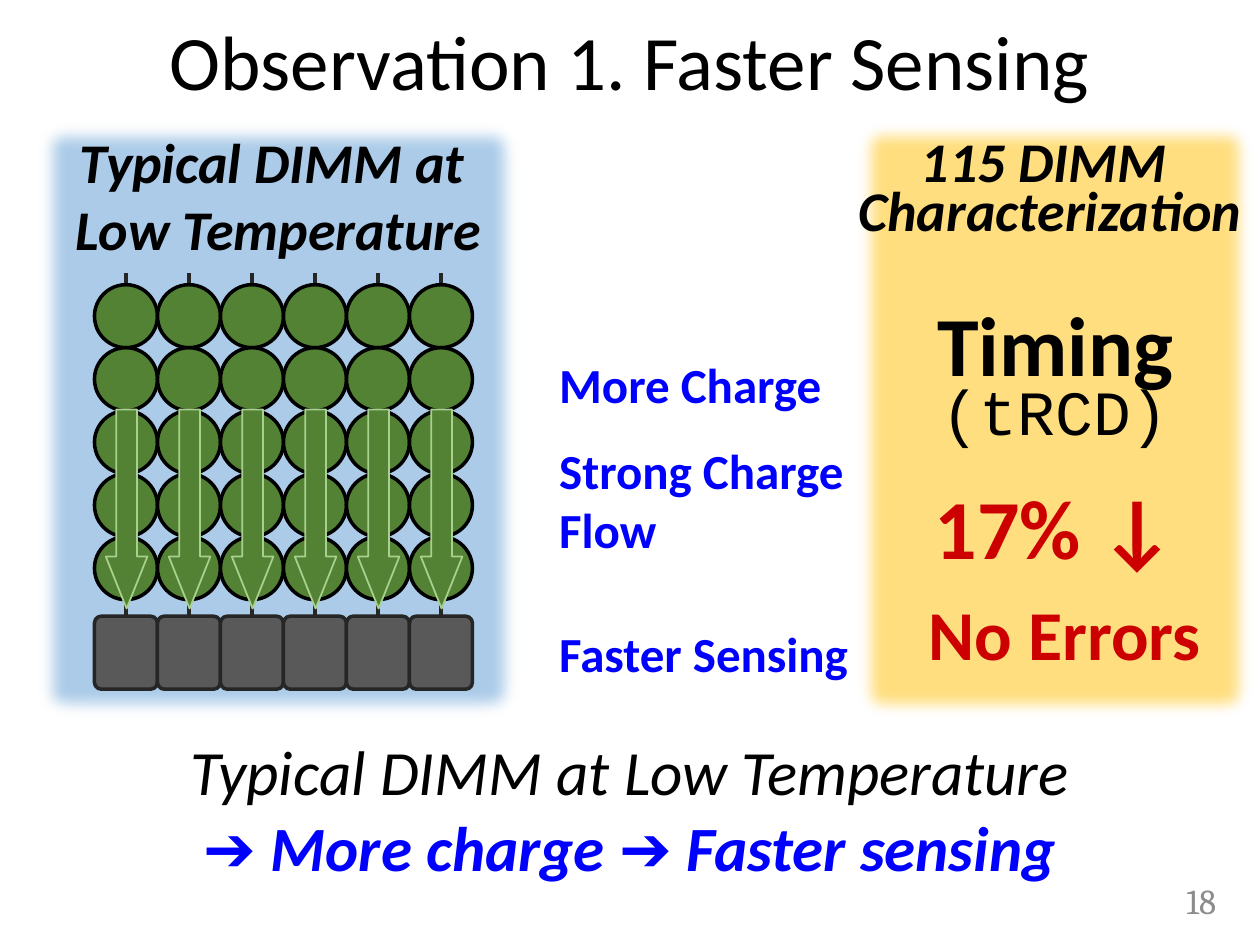
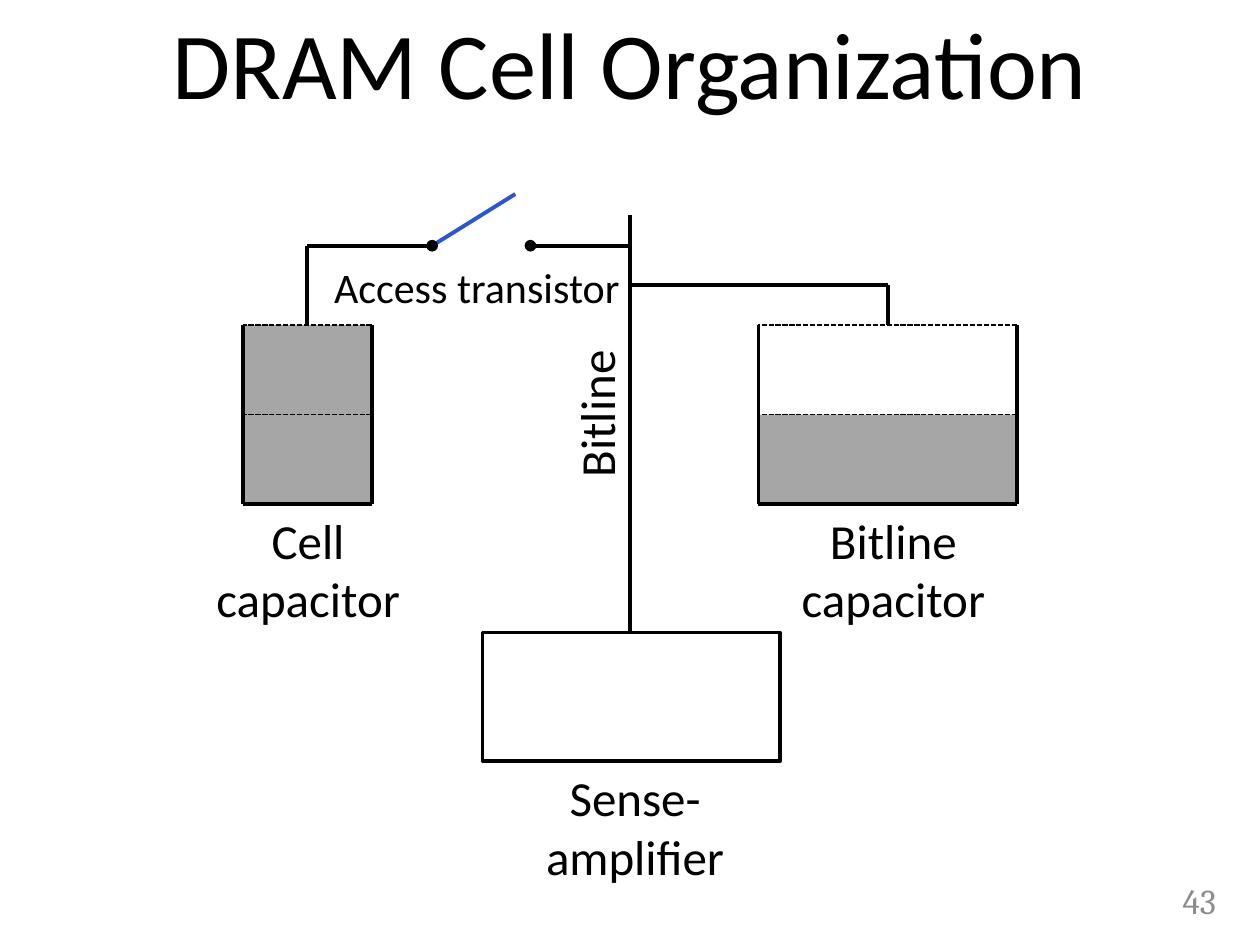
from dataclasses import dataclass

import pptx
import pptx.dml.color
import pptx.enum.dml
import pptx.enum.shapes
import pptx.enum.text
import pptx.oxml
import pptx.oxml.ns
import pptx.util

Inches = pptx.util.Inches
Pt = pptx.util.Pt
SHAPE = pptx.enum.shapes.MSO_SHAPE
ALIGN = pptx.enum.text.PP_ALIGN
ANCHOR = pptx.enum.text.MSO_ANCHOR
DASH = pptx.enum.dml.MSO_LINE
TITLE_ONLY = 5


@dataclass(frozen=True)
class Theme:
    body_font: str = "Calibri"
    number_font: str = "Cambria"
    code_font: str = "Courier New"
    black: str = "000000"
    white: str = "FFFFFF"
    page_gray: str = "8C8C8C"
    blue_panel: str = "5B9BD5"
    yellow_panel: str = "FFC000"
    emphasis_blue: str = "0000FF"
    result_red: str = "CC0000"
    cell_green: str = "548235"
    flow_green: str = "A9D18E"
    amplifier_fill: str = "595959"
    amplifier_line: str = "262626"
    charge_gray: str = "A6A6A6"
    switch_blue: str = "2A55D6"
    result_size: int = 48
    error_size: int = 40
    summary_size: int = 36
    heading_size: int = 32
    label_size: int = 28
    small_label_size: int = 24
    number_size: int = 20
    wire: float = 2.25


THEME = Theme()


@dataclass(frozen=True)
class Box:
    left: float
    top: float
    width: float
    height: float

    @property
    def right(self):
        return self.left + self.width

    @property
    def bottom(self):
        return self.top + self.height

    @property
    def center(self):
        return self.left + self.width / 2

    @property
    def lengths(self):
        return [Inches(v) for v in (self.left, self.top, self.width, self.height)]


def apply(target, values):
    for name, value in values.items():
        setattr(target, name, value)


def rgb(color):
    return pptx.dml.color.RGBColor.from_string(color)


def add_xml(parent, tag, **attributes):
    element = pptx.oxml.parse_xml(f"<a:{tag} {pptx.oxml.ns.nsdecls('a')}/>")
    for name, value in attributes.items():
        element.set(name, str(value))
    parent.append(element)
    return element


def run(text, color=THEME.black, **font):
    return text, color, {"name": THEME.body_font, **font}


def line_of(*runs, alignment=ALIGN.CENTER, **spacing):
    return runs, {"alignment": alignment, **spacing}


def write(text_frame, lines, **frame_format):
    apply(text_frame, {"word_wrap": True,
                       "auto_size": pptx.enum.text.MSO_AUTO_SIZE.NONE,
                       "vertical_anchor": ANCHOR.MIDDLE, **frame_format})
    for index, (runs, paragraph_format) in enumerate(lines):
        paragraph = text_frame.add_paragraph() if index else text_frame.paragraphs[0]
        apply(paragraph, paragraph_format)
        for text, color, font in runs:
            text_run = paragraph.add_run()
            text_run.text = text
            apply(text_run.font, font)
            text_run.font.color.rgb = rgb(color)


def add_text(slide, box, lines, rotation=0, **frame_format):
    shape = slide.shapes.add_textbox(*box.lengths)
    shape.rotation = rotation
    write(shape.text_frame, lines, **frame_format)


def add_shape(slide, kind, box, fill=None, line=None, weight=2, adjustments=()):
    shape = slide.shapes.add_shape(kind, *box.lengths)
    shape.shadow.inherit = False
    for index, value in enumerate(adjustments):
        shape.adjustments[index] = value
    if fill:
        shape.fill.solid()
        shape.fill.fore_color.rgb = rgb(fill)
    else:
        shape.fill.background()
    if line:
        shape.line.color.rgb = rgb(line)
        shape.line.width = Pt(weight)
    else:
        shape.line.fill.background()
    return shape


def add_line(slide, start, end, color=THEME.black, weight=THEME.wire, dash=None, dot=None):
    """Draw a straight line; dot is "headEnd" or "tailEnd" for a round end."""
    connector = slide.shapes.add_connector(
        pptx.enum.shapes.MSO_CONNECTOR.STRAIGHT, *map(Inches, (*start, *end)))
    connector.line.color.rgb = rgb(color)
    connector.line.width = Pt(weight)
    if dash:
        connector.line.dash_style = dash
    properties = connector._element.spPr
    if dot:
        add_xml(properties.find(pptx.oxml.ns.qn("a:ln")), dot, type="oval")
    add_xml(properties, "effectLst")


def add_slide(presentation, title, title_box, size, number):
    slide = presentation.slides.add_slide(presentation.slide_layouts[TITLE_ONLY])
    slide.background.fill.solid()
    slide.background.fill.fore_color.rgb = rgb(THEME.white)
    placeholder = slide.shapes.title
    apply(placeholder, dict(zip(("left", "top", "width", "height"), title_box.lengths)))
    write(placeholder.text_frame, [line_of(run(title, size=Pt(size)), line_spacing=0.9)],
          vertical_anchor=ANCHOR.BOTTOM)
    add_text(slide, Box(9, 6.95, 0.75, 0.4),
             [line_of(run(str(number), THEME.page_gray, name=THEME.number_font,
                          size=Pt(THEME.number_size)), alignment=ALIGN.RIGHT)])
    return slide


def add_soft_panel(slide, box, color):
    """Half-transparent rectangle with blurred edges."""
    panel = add_shape(slide, SHAPE.RECTANGLE, box, color, THEME.blue_panel, 1)
    properties = panel._element.spPr
    color_element = properties.find(pptx.oxml.ns.qn("a:solidFill"))[0]
    add_xml(color_element, "alpha", val=50000)
    effects = properties.find(pptx.oxml.ns.qn("a:effectLst"))
    add_xml(effects, "softEdge", rad=Pt(10))
    return panel


def heading_run(text):
    return run(text, size=Pt(THEME.heading_size), bold=True, italic=True)


def add_dimm_panel(slide, box):
    add_soft_panel(slide, box, THEME.blue_panel)
    add_text(slide, Box(box.left - 0.08, box.top, box.width + 0.16, 1.25),
             [line_of(heading_run("Typical DIMM at ")),
              line_of(heading_run("Low Temperature"))])
    add_cell_array(slide, Box(box.left + 0.5, box.top + 1.25, 3, 3.3))


def add_cell_array(slide, box, columns=6, rows=5):
    pitch = box.width / columns
    amplifier_height = 0.58
    amplifier_top = box.bottom - amplifier_height
    lefts = [box.left + pitch * column for column in range(columns)]
    for left in lefts:
        center = left + pitch / 2
        add_line(slide, (center, amplifier_top), (center, box.top), THEME.amplifier_line, 2)
        add_shape(slide, SHAPE.ROUNDED_RECTANGLE,
                  Box(left, amplifier_top, pitch, amplifier_height),
                  THEME.amplifier_fill, THEME.amplifier_line, adjustments=[0.11])
    for row in range(rows):
        for left in lefts:
            add_shape(slide, SHAPE.OVAL,
                      Box(left, box.top + 0.09 + pitch * row, pitch, pitch),
                      THEME.cell_green, THEME.black)
    for left in lefts:
        add_shape(slide, SHAPE.DOWN_ARROW, Box(left + 0.09, box.top + 1.08, 0.33, 1.58),
                  THEME.cell_green, THEME.flow_green, 1, [0.5, 1.25])


def add_effect_labels(slide, box):
    labels = [(0, 0.58, ["More Charge"]),
              (0.74, 0.92, ["Strong Charge", "Flow"]),
              (2.13, 0.58, ["Faster Sensing"])]
    for offset, height, texts in labels:
        add_text(slide, Box(box.left, box.top + offset, box.width, height),
                 [line_of(run(text, THEME.emphasis_blue, size=Pt(THEME.label_size),
                              bold=True), alignment=ALIGN.LEFT) for text in texts])


def add_characterization_panel(slide, box):
    panel = add_soft_panel(slide, box, THEME.yellow_panel)
    result = {"size": Pt(THEME.result_size), "bold": True}
    write(panel.text_frame, [
        line_of(run("Timing", **result)),
        line_of(run("(tRCD)", name=THEME.code_font, size=Pt(THEME.summary_size)),
                line_spacing=0.7),
        line_of(run("17% ↓", THEME.result_red, **result), space_before=Pt(17)),
        line_of(run(" ", THEME.result_red, **result),
                run("No Errors", THEME.result_red, size=Pt(THEME.error_size), bold=True)),
    ], vertical_anchor=ANCHOR.TOP, margin_top=Inches(1.4))
    add_text(slide, Box(box.left - 0.08, box.top, box.width + 0.08, 1.08),
             [line_of(heading_run("115 DIMM ")),
              line_of(heading_run("Characterization"), line_spacing=0.7)])


def add_summary(slide, box):
    style = {"size": Pt(THEME.summary_size), "italic": True}
    add_text(slide, box, [
        line_of(run("Typical DIMM at Low Temperature", **style)),
        line_of(run("➔ More charge ➔ Faster sensing", THEME.emphasis_blue,
                    bold=True, **style))])


def add_diagram_label(slide, box, text, size=THEME.label_size, rotation=0):
    add_text(slide, box, [line_of(run(text, size=Pt(size)))], rotation,
             vertical_anchor=ANCHOR.TOP)


def add_capacitor(slide, box, charge, label, label_left, label_width):
    """Open container filled to the given share of its height."""
    level = box.bottom - box.height * charge
    add_diagram_label(slide, Box(label_left, box.bottom, label_width, 1.04), label)
    add_shape(slide, SHAPE.RECTANGLE,
              Box(box.left, level, box.width, box.bottom - level), THEME.charge_gray)
    for x in (box.left, box.right):
        add_line(slide, (x, box.bottom), (x, box.top))
    add_line(slide, (box.right, box.bottom), (box.left, box.bottom))
    for y in (box.top, box.top + box.height / 2):
        add_line(slide, (box.right, y), (box.left, y), weight=1, dash=DASH.SQUARE_DOT)


def add_access_transistor(slide, cell, bitline_x):
    wire_y = cell.top - 0.63
    hinge = (cell.center + 0.99, wire_y)
    add_diagram_label(slide, Box(cell.left + 0.17, wire_y + 0.08, 3.37, 0.5),
                      "Access transistor", THEME.small_label_size)
    add_line(slide, (cell.center, cell.top), (cell.center, wire_y))
    add_line(slide, (hinge[0] + 0.66, wire_y - 0.41), hinge, THEME.switch_blue)
    add_line(slide, hinge, (cell.center, wire_y), dot="headEnd")
    add_line(slide, (bitline_x, wire_y), (hinge[0] + 0.78, wire_y), dot="tailEnd")


def add_bitline(slide, x, top, amplifier, capacitor):
    branch_y = capacitor.top - 0.32
    add_line(slide, (capacitor.center, branch_y), (x, branch_y))
    add_line(slide, (capacitor.center, capacitor.top), (capacitor.center, branch_y))
    add_line(slide, (x, amplifier.top), (x, top))
    add_diagram_label(slide, Box(x - 0.97, top + 1.29, 1.4, 0.57), "Bitline", rotation=270)


def add_sense_amplifier(slide, box):
    add_shape(slide, SHAPE.RECTANGLE, box, line=THEME.black, weight=THEME.wire)
    add_diagram_label(slide, Box(box.left - 0.09, box.bottom, 2.6, 1.04), "Sense-amplifier")


def build_sensing_slide(presentation):
    slide = add_slide(presentation, "Observation 1. Faster Sensing",
                      Box(0, 0.07, 10, 0.83), 44, 18)
    add_dimm_panel(slide, Box(0.25, 0.92, 3.92, 4.83))
    add_effect_labels(slide, Box(4.34, 2.76, 2.74, 2.71))
    add_summary(slide, Box(0, 5.83, 10, 1.17))
    add_characterization_panel(slide, Box(6.75, 0.92, 3.25, 4.83))


def build_cell_slide(presentation):
    slide = add_slide(presentation, "DRAM Cell Organization",
                      Box(0, 0.17, 10, 0.83), 54, 43)
    cell = Box(1.93, 2.58, 1.02, 1.42)
    bitline_capacitor = Box(6.02, 2.58, 2.05, 1.42)
    amplifier = Box(3.83, 5.02, 2.36, 1.02)
    bitline_x = 5
    add_capacitor(slide, cell, 1, "Cell capacitor", 1.3, 2.29)
    add_capacitor(slide, bitline_capacitor, 0.5, "Bitline capacitor", 5.79, 2.6)
    add_sense_amplifier(slide, amplifier)
    add_access_transistor(slide, cell, bitline_x)
    add_bitline(slide, bitline_x, 1.71, amplifier, bitline_capacitor)


def main():
    presentation = pptx.Presentation()
    presentation.slide_width = Inches(10)
    presentation.slide_height = Inches(7.5)
    build_sensing_slide(presentation)
    build_cell_slide(presentation)
    presentation.save("out.pptx")


if __name__ == "__main__":
    main()
